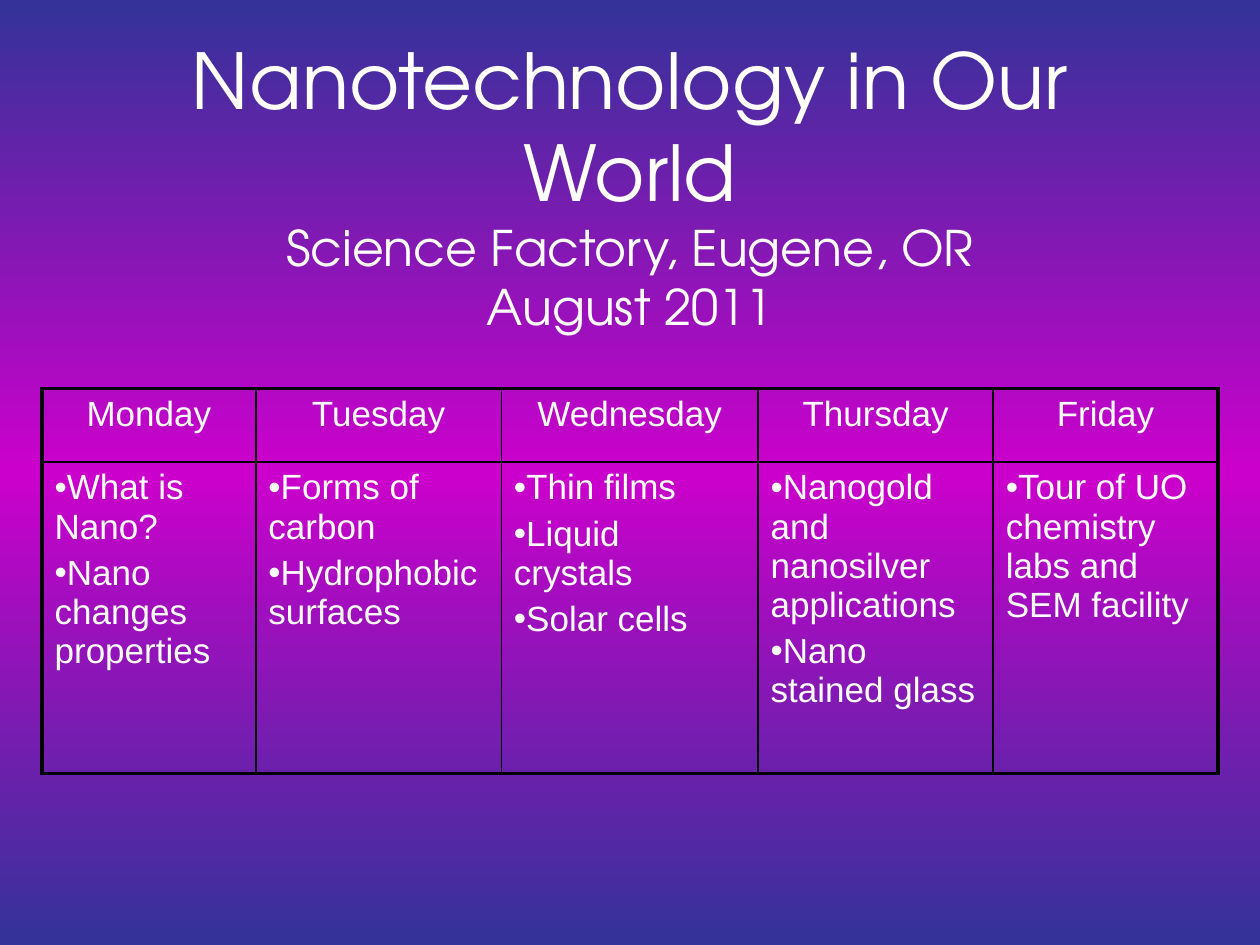
"""Build the weekly schedule slide of a nanotechnology camp."""
from copy import deepcopy

from lxml.etree import SubElement
from pptx import Presentation
from pptx.dml.color import RGBColor
from pptx.enum.text import MSO_ANCHOR, PP_ALIGN
from pptx.oxml import parse_xml
from pptx.oxml.ns import nsdecls, qn
from pptx.util import Pt

WHITE = RGBColor(0xFF, 0xFF, 0xFF)
BLACK = RGBColor(0, 0, 0)
INDIGO = RGBColor(0x33, 0x33, 0x99)
MAGENTA = RGBColor(0xCC, 0x00, 0xCC)

TITLE_LINES = [
    ("Nanotechnology in Our World", 44),
    ("Science Factory, Eugene, OR", 28),
    ("August 2011", 28),
]
SCHEDULE = [
    ("Monday", 122.2, ["What is Nano?", "Nano changes properties"]),
    ("Tuesday", 140.3, ["Forms of carbon", "Hydrophobic surfaces"]),
    ("Wednesday", 146.7, ["Thin films", "Liquid crystals", "Solar cells"]),
    ("Thursday", 134.4, ["Nanogold and nanosilver applications", "Nano stained glass"]),
    ("Friday", 128.4, ["Tour of UO chemistry labs and SEM facility"]),
]
ROW_HEIGHTS = [42, 178]
OUTER, INNER = 2.25, 1


def add_text(paragraph, text, size=20, font="Arial", align=PP_ALIGN.LEFT, bullet=None):
    paragraph.alignment = align
    if bullet:
        properties = paragraph._p.get_or_add_pPr()
        properties.set("marL", "0")
        properties.set("indent", "0")
        SubElement(properties, qn("a:buFont"), typeface=font)
        SubElement(properties, qn("a:buChar"), char=bullet)
    run = paragraph.add_run()
    run.text = text
    run.font.size = Pt(size)
    run.font.name = font
    run.font.color.rgb = WHITE


def set_borders(cell, widths):
    properties = cell._tc.get_or_add_tcPr()
    for index, (side, width) in enumerate(widths.items()):
        properties.insert(index, parse_xml(
            f'<a:ln{side} {nsdecls("a")} w="{Pt(width)}"><a:solidFill>'
            f'<a:srgbClr val="{BLACK}"/></a:solidFill></a:ln{side}>'))


presentation = Presentation()
presentation.slide_width = Pt(720)
presentation.slide_height = Pt(540)
slide = presentation.slides.add_slide(presentation.slide_layouts[6])

background = slide.background.fill
background.gradient()
background.gradient_angle = 270
stop_list = slide.element.find(".//" + qn("a:gsLst"))
stop_list.append(deepcopy(stop_list[0]))
for stop, position, color in zip(
        background.gradient_stops, [0, 0.5, 1], [INDIGO, MAGENTA, INDIGO]):
    stop.position = position
    stop.color.rgb = color

title = slide.shapes.add_textbox(Pt(36), Pt(60), Pt(648), Pt(90))
title.text_frame.word_wrap = True
title.text_frame.vertical_anchor = MSO_ANCHOR.MIDDLE
title_paragraph = title.text_frame.paragraphs[0]
for index, (line, size) in enumerate(TITLE_LINES):
    if index:
        title_paragraph.add_line_break()
    add_text(title_paragraph, line, size=size, font="TeX Gyre Adventor", align=PP_ALIGN.CENTER)

table = slide.shapes.add_table(
    len(ROW_HEIGHTS), len(SCHEDULE), Pt(24), Pt(222), Pt(672), Pt(sum(ROW_HEIGHTS))).table
table.first_row = False
table.horz_banding = False
for row, height in zip(table.rows, ROW_HEIGHTS):
    row.height = Pt(height)

last_column = len(SCHEDULE) - 1
for column, (day, width, topics) in enumerate(SCHEDULE):
    table.columns[column].width = Pt(width)
    header, body = table.cell(0, column), table.cell(1, column)
    add_text(header.text_frame.paragraphs[0], day, align=PP_ALIGN.CENTER)
    for index, topic in enumerate(topics):
        paragraph = body.text_frame.add_paragraph() if index else body.text_frame.paragraphs[0]
        add_text(paragraph, topic, bullet="•")
        if index:
            paragraph.space_before = Pt(4)
    for row, cell in enumerate([header, body]):
        cell.fill.background()
        set_borders(cell, {
            "L": OUTER if column == 0 else INNER,
            "R": OUTER if column == last_column else INNER,
            "T": OUTER if row == 0 else INNER,
            "B": OUTER if row == 1 else INNER,
        })

presentation.save("out.pptx")
